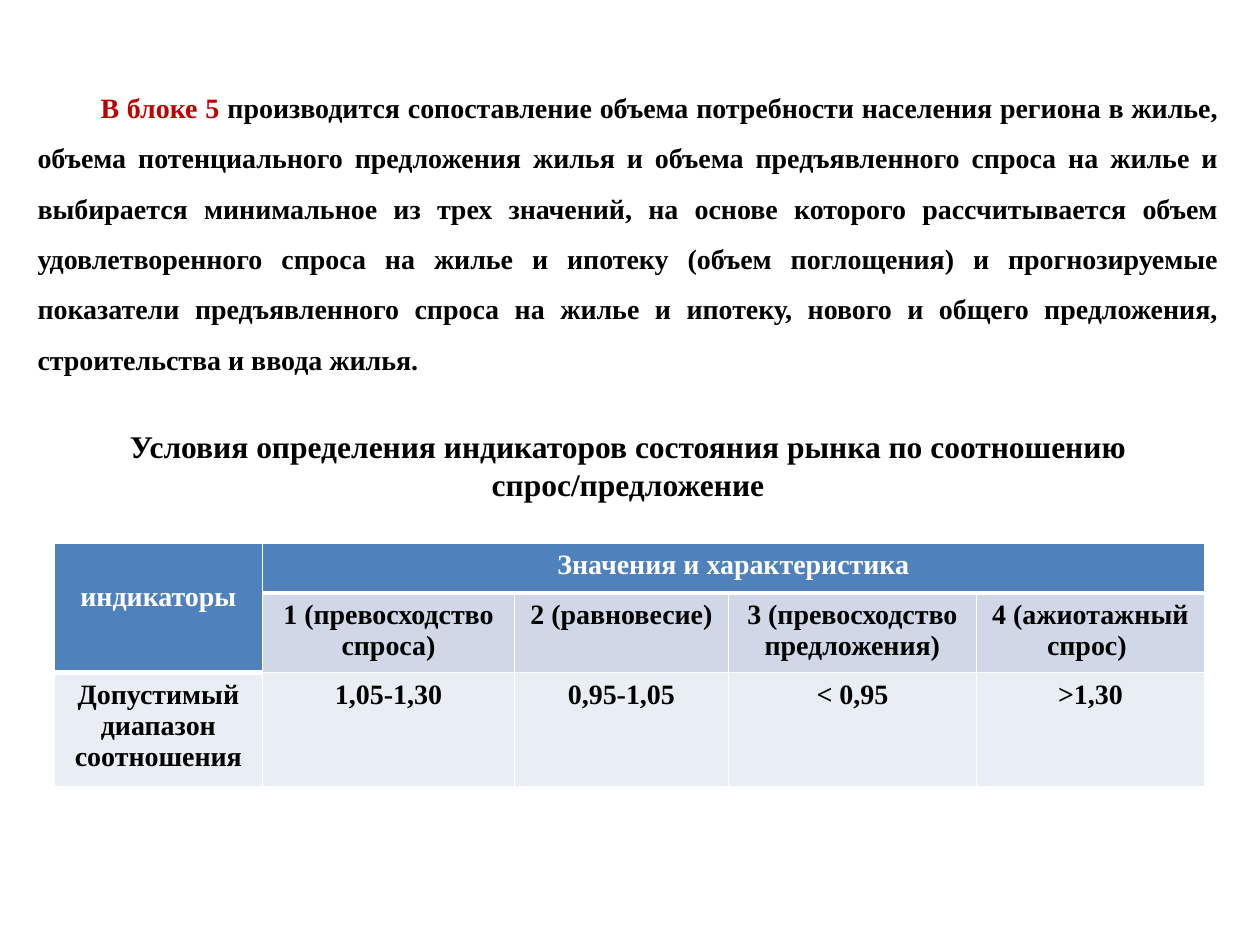
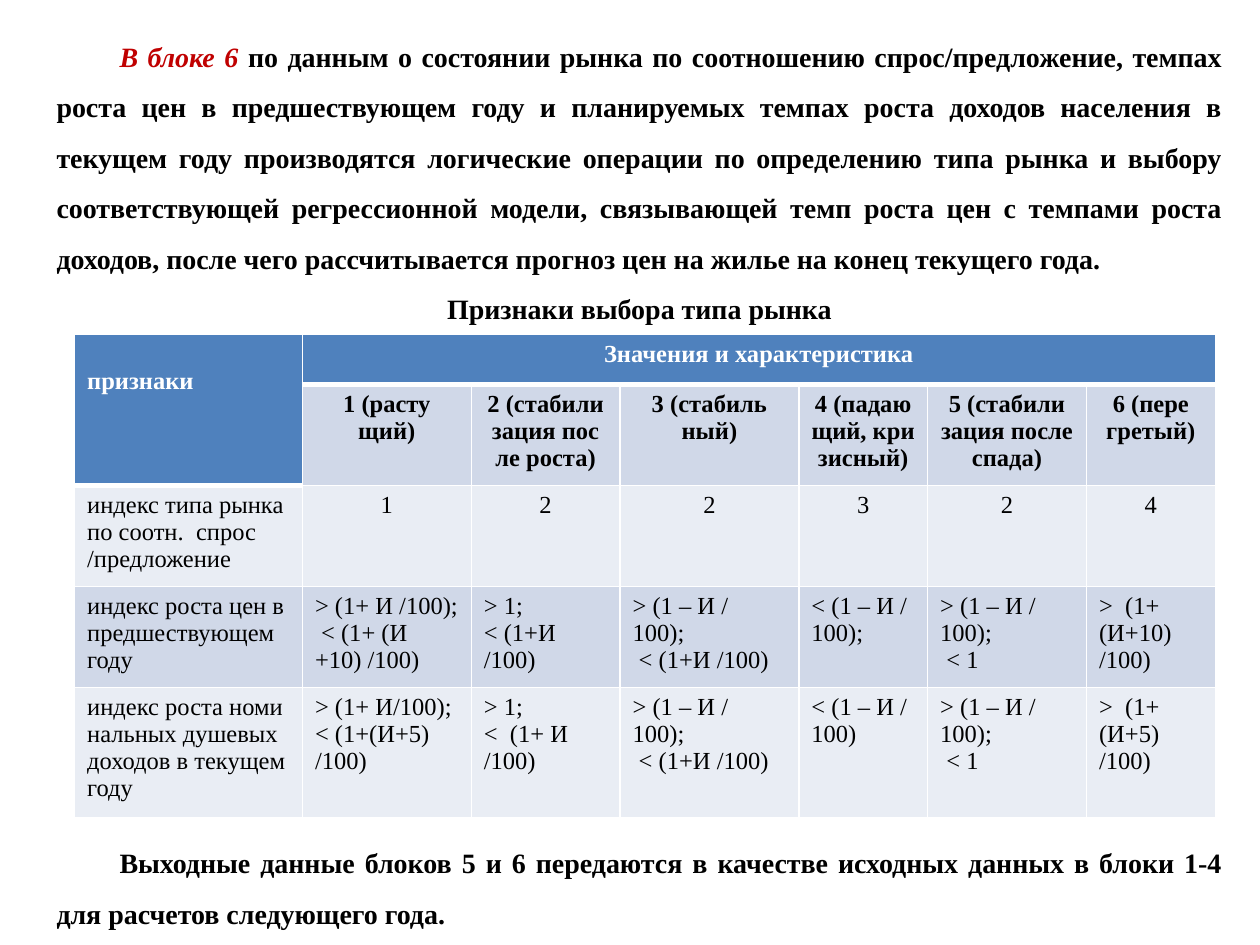
from lxml import etree
from pptx import Presentation
from pptx.dml.color import RGBColor
from pptx.enum.text import MSO_ANCHOR, PP_ALIGN
from pptx.oxml.ns import qn
from pptx.util import Pt

LEFT, CENTER, JUSTIFY = PP_ALIGN.LEFT, PP_ALIGN.CENTER, PP_ALIGN.JUSTIFY
TOP = MSO_ANCHOR.TOP
FONT = "Times New Roman"
BLACK, WHITE, RED = "000000", "FFFFFF", "C00000"
HEADER_FILL, BAND_FILLS = "4F81BD", ("D0D8E8", "E9EDF4")
BODY_SIZE, BODY_PITCH = 16, 28.8
FIRST_LINE_INDENT = 36

BODY = {"align": JUSTIFY, "indent": FIRST_LINE_INDENT}
EMPHASIS = {"color": RED}

SLIDES = [
    {
        "text_box": (14.4, 38.5, 689, 273),
        "paragraphs": [
            (BODY, [
                ("В блоке 5 ", EMPHASIS),
                ("производится сопоставление объема потребности населения региона в жилье, "
                 "объема потенциального предложения жилья и объема предъявленного спроса на жилье "
                 "и выбирается минимальное из трех значений, на основе которого рассчитывается "
                 "объем удовлетворенного спроса на жилье и ипотеку (объем поглощения) и "
                 "прогнозируемые показатели предъявленного спроса на жилье и ипотеку, нового и "
                 "общего предложения, строительства и ввода жилья.", {}),
            ]),
            ({"align": CENTER, "space_before": BODY_PITCH, "pitch": 21.7}, [
                ("Условия определения индикаторов состояния рынка по соотношению "
                 "спрос/предложение", {"size": 18}),
            ]),
        ],
        "table": {
            "position": (31, 310.3),
            "columns": [119, 144, 122.2, 141.8, 130.2],
            "rows": [28.5, 45.5, 65],
            "size": 16,
            "corner_margin": 22,
            "label_align": CENTER,
            "body": [{"align": CENTER, "bold": True}],
            "cells": [
                ["индикаторы", "Значения и характеристика"],
                ["", "1 (превосходство спроса)", "2 (равновесие)",
                 "3 (превосходство предложения)", "4 (ажиотажный спрос) "],
                ["Допустимый диапазон соотношения", "1,05-1,30", "0,95-1,05", "< 0,95", ">1,30"],
            ],
        },
    },
    {
        "text_box": (25.2, 9.4, 680.4, 530.6),
        "paragraphs": [
            (BODY, [
                ("В блоке 6 ", EMPHASIS | {"italic": True}),
                ("по данным о состоянии рынка по соотношению спрос/предложение, темпах роста цен "
                 "в предшествующем году и планируемых темпах роста доходов населения в текущем "
                 "году производятся логические операции по определению типа рынка и выбору "
                 "соответствующей регрессионной модели, связывающей темп роста цен с темпами "
                 "роста доходов, после чего рассчитывается прогноз цен на жилье на конец "
                 "текущего года.", {}),
            ]),
            ({"align": CENTER}, [("Признаки выбора типа рынка", {})]),
            (BODY | {"space_before": 10 * BODY_PITCH}, [
                ("Выходные данные блоков 5 и 6 передаются в качестве исходных данных в блоки 1-4 "
                 "для расчетов следующего года.", {}),
            ]),
        ],
        "table": {
            "position": (42.6, 190.8),
            "columns": [130.2, 96.5, 85, 102.2, 73.6, 90.8, 73.6],
            "rows": [29, 57.6, 57.6, 57.6, 74.4],
            "size": 14,
            "corner_margin": 19.2,
            "label_align": LEFT,
            "body": [
                {"align": CENTER, "bold": False},
                {"align": LEFT, "bold": False},
                {"align": LEFT, "bold": False},
            ],
            "cells": [
                ["признаки", "Значения и характеристика"],
                ["", "1 (расту щий)", "2 (стабили зация пос ле роста)", "3 (стабиль ный)",
                 "4 (падаю щий, кри зисный)", "5 (стабили зация после спада)", "6 (пере гретый)"],
                ["индекс типа рынка по соотн.  спрос /предложение", "1", "2", "2", "3", "2", "4"],
                ["индекс роста цен в предшествующем году",
                 "> (1+ И /100);\n < (1+ (И +10) /100)", "> 1;\n< (1+И /100)",
                 "> (1 – И / 100);\n < (1+И /100)", "< (1 – И / 100);",
                 "> (1 – И / 100);\n < 1", ">  (1+ (И+10) /100)"],
                ["индекс роста номи нальных душевых доходов в текущем году",
                 "> (1+ И/100);\n< (1+(И+5) /100)", "> 1;\n<  (1+ И /100)",
                 "> (1 – И / 100);\n < (1+И /100)", "< (1 – И / 100)",
                 "> (1 – И / 100);\n < 1", ">  (1+ (И+5) /100)"],
            ],
        },
    },
]


def rgb(color):
    return RGBColor.from_string(color)


def format_run(run, size=BODY_SIZE, color=BLACK, bold=True, italic=False):
    values = {"name": FONT, "size": Pt(size), "bold": bold, "italic": italic}
    for name, value in values.items():
        setattr(run.font, name, value)
    run.font.color.rgb = rgb(color)


def add_text(slide, box, paragraphs):
    frame = slide.shapes.add_textbox(*map(Pt, box)).text_frame
    frame.word_wrap = True
    frame.vertical_anchor = TOP
    for index, (layout, runs) in enumerate(paragraphs):
        paragraph = frame.paragraphs[0] if index == 0 else frame.add_paragraph()
        values = {
            "alignment": layout["align"],
            "line_spacing": Pt(layout.get("pitch", BODY_PITCH)),
            "space_before": Pt(layout.get("space_before", 0)),
        }
        for name, value in values.items():
            setattr(paragraph, name, value)
        paragraph._p.get_or_add_pPr().set("indent", str(Pt(layout.get("indent", 0))))
        for text, run_format in runs:
            run = paragraph.add_run()
            run.text = text
            format_run(run, **run_format)


def set_borders(cell, bottom_width):
    properties = cell._tc.get_or_add_tcPr()
    widths = {"lnL": 1, "lnR": 1, "lnT": 1, "lnB": bottom_width}
    for index, (side, width) in enumerate(widths.items()):
        line = etree.Element(qn(f"a:{side}"), w=str(Pt(width)))
        fill = etree.SubElement(line, qn("a:solidFill"))
        etree.SubElement(fill, qn("a:srgbClr"), val=WHITE)
        properties.insert(index, line)


def add_indicator_table(slide, layout):
    """Add a table whose corner spans two rows and whose heading spans the value columns."""
    columns, rows = layout["columns"], layout["rows"]
    frame = slide.shapes.add_table(
        len(rows), len(columns), *map(Pt, (*layout["position"], sum(columns), sum(rows))))
    table = frame.table
    for column, width in zip(table.columns, columns):
        column.width = Pt(width)
    for row, height in zip(table.rows, rows):
        row.height = Pt(height)
    table.cell(0, 0).merge(table.cell(1, 0))
    table.cell(0, 1).merge(table.cell(0, len(columns) - 1))

    row_formats = [{"align": CENTER, "bold": True}] * 2 + layout["body"]
    for row_index, row_format in enumerate(row_formats):
        texts = layout["cells"][row_index]
        for column_index in range(len(columns)):
            cell = table.cell(row_index, column_index)
            is_header = row_index == 0 or (row_index == 1 and column_index == 0)
            cell.fill.solid()
            cell.fill.fore_color.rgb = rgb(
                HEADER_FILL if is_header else BAND_FILLS[(row_index - 1) % 2])
            set_borders(cell, 3 if is_header else 1)
            if cell.is_spanned:
                continue
            cell.text_frame.text = texts[column_index]
            for paragraph in cell.text_frame.paragraphs:
                paragraph.alignment = (
                    layout["label_align"] if column_index == 0 else row_format["align"])
                for run in paragraph.runs:
                    format_run(run, layout["size"], WHITE if is_header else BLACK,
                               row_format["bold"])
    table.cell(0, 0).margin_top = Pt(layout["corner_margin"])


def main():
    presentation = Presentation()
    presentation.slide_width, presentation.slide_height = Pt(720), Pt(540)
    for content in SLIDES:
        slide = presentation.slides.add_slide(presentation.slide_layouts[6])
        add_text(slide, content["text_box"], content["paragraphs"])
        add_indicator_table(slide, content["table"])
    presentation.save("out.pptx")


if __name__ == "__main__":
    main()
